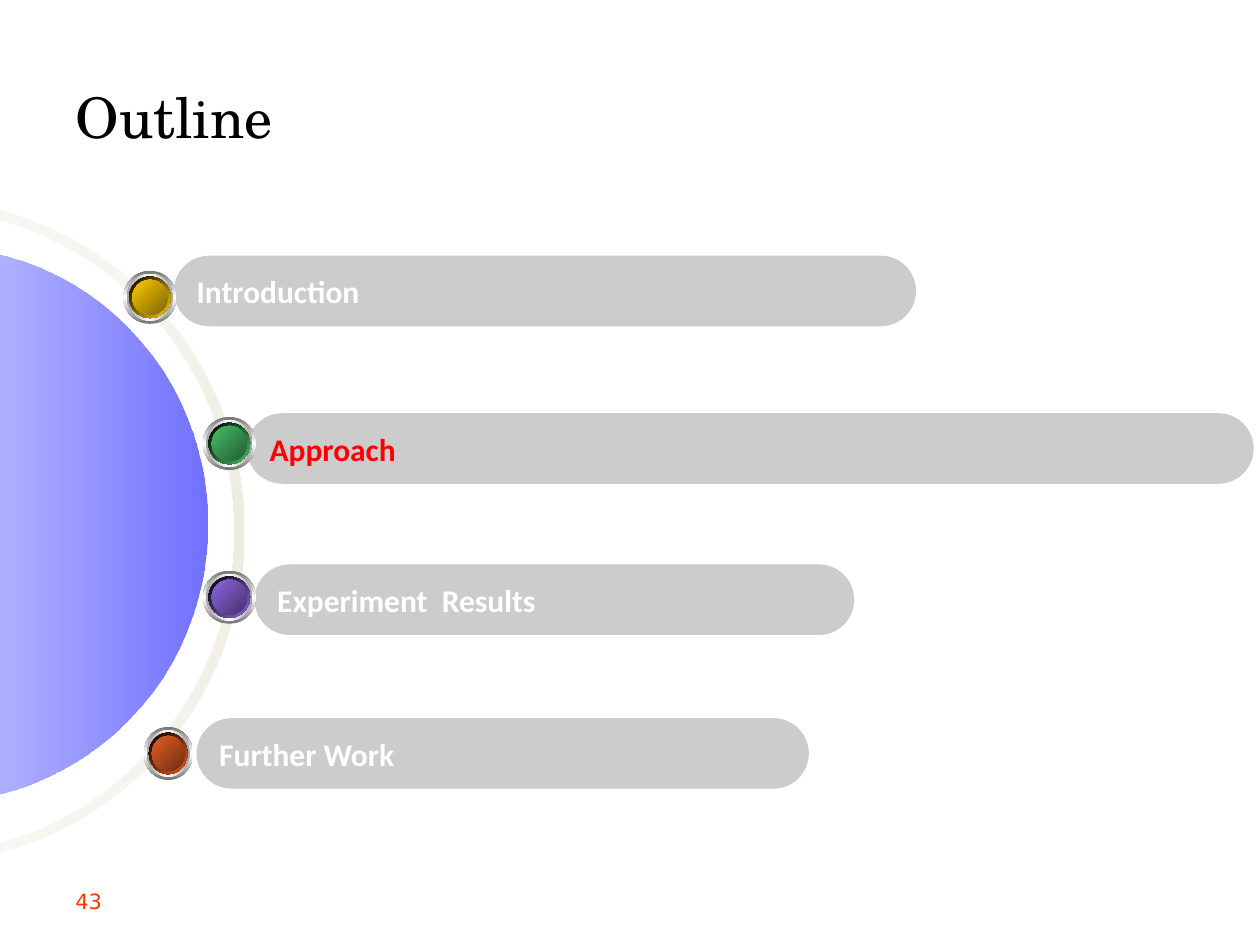
from pptx import Presentation
from pptx.dml.color import RGBColor
from pptx.enum.shapes import MSO_SHAPE
from pptx.enum.text import MSO_ANCHOR, PP_ALIGN
from pptx.oxml import parse_xml
from pptx.oxml.ns import nsdecls
from pptx.util import Inches, Pt

ARC, OVAL, PILL = MSO_SHAPE.BLOCK_ARC, MSO_SHAPE.OVAL, MSO_SHAPE.ROUNDED_RECTANGLE
LEFT, MIDDLE = PP_ALIGN.LEFT, MSO_ANCHOR.MIDDLE
TITLE_ONLY = 5

COLORS = {
    "title": "000000", "number": "FF3300", "bar": "CCCCCC",
    "text": "FFFFFF", "current": "FF0000",
    "ring_edge": "F7F7F2", "ring_mid": "EEECE1",
    "blue": "0000FF", "white": "FFFFFF", "black": "000000",
    "rim": "767676", "bevel": "A2A2A2",
    "gold": "FFCC00", "gold_dark": "7C6300",
    "green": "48BE67", "green_dark": "235C32",
    "purple": "8D67E1", "purple_dark": "45326D",
    "orange": "E35E23", "orange_dark": "6E2E11",
}

TITLE = ("Outline", (0.5, 0.3, 9, 1.25))
NUMBER = ("43", (0.5, 6.95, 2.33, 0.4))

ARCS = [
    ((-3.31, 1.61, 5.28, 5.22), 0.015, 0,
     [("ring_edge", 100), ("ring_mid", 100), ("ring_edge", 100)]),
    ((-2.71, 2.01, 4.41, 4.3), 0.5, 90, [("blue", 56), ("white", 48)]),
]

BAR_HEIGHT = 0.56
KNOB_HEIGHT = 0.42
ITEMS = [
    ("Introduction", "text", (1.38, 2.03, 5.89), "gold", (0.98, 2.15, 0.42)),
    ("Approach", "current", (1.96, 3.28, 7.99), "green", (1.61, 3.31, 0.42)),
    ("Experiment  Results", "text", (2.02, 4.48, 4.76), "purple", (1.61, 4.53, 0.42)),
    ("Further Work", "text", (1.56, 5.7, 4.86), "orange", (1.14, 5.77, 0.39)),
]


def rgb(name):
    return RGBColor.from_string(COLORS[name])


def place(s, box):
    s.left, s.top, s.width, s.height = map(Inches, box)


def add_shape(shapes, kind, box):
    s = shapes.add_shape(kind, *map(Inches, box))
    s.shadow.inherit = False
    s.line.fill.background()
    return s


def gradient(s, stops, angle):
    step = 100000 // (len(stops) - 1)
    gs = "".join(
        f'<a:gs pos="{i * step}"><a:srgbClr val="{COLORS[name]}">'
        f'<a:alpha val="{alpha * 1000}"/></a:srgbClr></a:gs>'
        for i, (name, alpha) in enumerate(stops))
    s.fill.background()
    sp_pr = s._element.spPr
    sp_pr.replace(sp_pr.find("{*}noFill"), parse_xml(
        f'<a:gradFill {nsdecls("a")} rotWithShape="1"><a:gsLst>{gs}</a:gsLst>'
        f'<a:lin ang="{angle * 60000}" scaled="0"/></a:gradFill>'))


def write(s, text, font, size, color, bold=False):
    tf = s.text_frame
    tf.word_wrap = True
    tf.vertical_anchor = MIDDLE
    p = tf.paragraphs[0]
    p.alignment = LEFT
    r = p.add_run()
    r.text = text
    r.font.name, r.font.size, r.font.bold = font, Pt(size), bold
    r.font.color.rgb = rgb(color)


def add_knob(shapes, color, left, top, width):
    layers = [
        (0.42, ["rim", "white", "rim"], 90),
        (0.37, ["bevel", "white", "bevel"], 0),
        (0.33, ["black", color], 45),
        (0.28, [color, color + "_dark"], 45),
    ]
    group = shapes.add_group_shape()
    for height, names, angle in layers:
        w = width * height / KNOB_HEIGHT
        box = (left + (width - w) / 2, top + (KNOB_HEIGHT - height) / 2, w, height)
        s = add_shape(group.shapes, OVAL, box)
        gradient(s, [(name, 100) for name in names], angle)


def main():
    prs = Presentation()
    prs.slide_width, prs.slide_height = Inches(10), Inches(7.5)
    slide = prs.slides.add_slide(prs.slide_layouts[TITLE_ONLY])
    shapes = slide.shapes

    text, box = TITLE
    place(shapes.title, box)
    write(shapes.title, text, "TeX Gyre Schola", 32, "title")

    text, box = NUMBER
    write(shapes.add_textbox(*map(Inches, box)), text, "DejaVu Sans", 12, "number")

    for box, thickness, angle, stops in ARCS:
        s = add_shape(shapes, ARC, box)
        s.rotation = 90
        s.adjustments[2] = thickness
        gradient(s, stops, angle)

    for text, color, (left, top, width), _, _ in ITEMS:
        s = add_shape(shapes, PILL, (left, top, width, BAR_HEIGHT))
        s.adjustments[0] = 0.5
        s.fill.solid()
        s.fill.fore_color.rgb = rgb("bar")
        write(s, text, "Calibri", 18, color, True)

    for _, _, _, color, knob in ITEMS:
        add_knob(shapes, color, *knob)

    prs.save("out.pptx")


if __name__ == "__main__":
    main()
